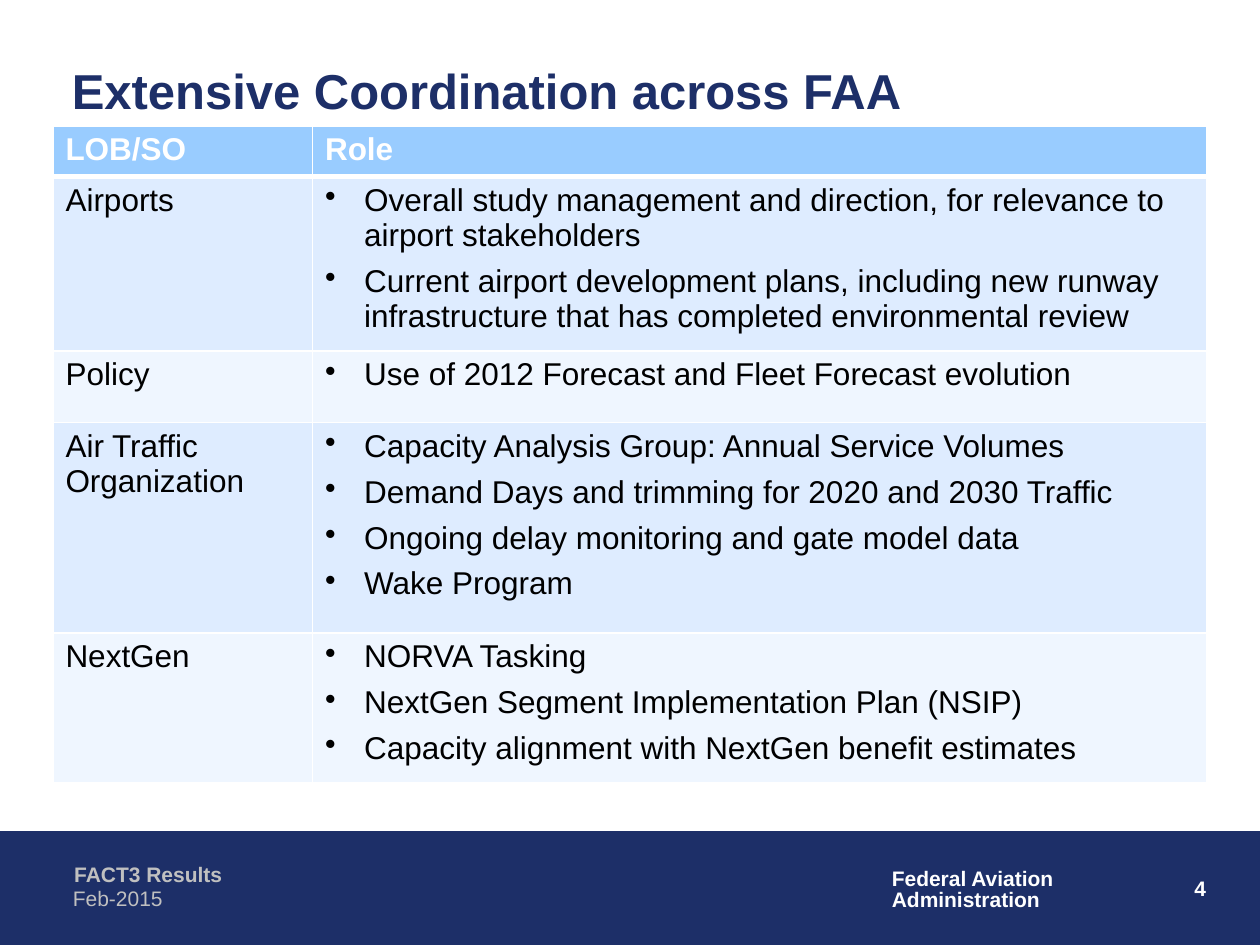
from lxml import etree
from pptx import Presentation
from pptx.dml.color import RGBColor
from pptx.enum.shapes import MSO_SHAPE
from pptx.enum.text import MSO_ANCHOR, PP_ALIGN
from pptx.oxml.ns import qn
from pptx.util import Inches, Pt

RECT = MSO_SHAPE.RECTANGLE
LEFT, RIGHT = PP_ALIGN.LEFT, PP_ALIGN.RIGHT
MIDDLE = MSO_ANCHOR.MIDDLE

NAVY = RGBColor(0x1D, 0x2F, 0x68)
SKY = RGBColor(0x99, 0xCC, 0xFF)
BANDS = RGBColor(0xDE, 0xEC, 0xFF), RGBColor(0xEF, 0xF6, 0xFF)
WHITE = RGBColor(0xFF, 0xFF, 0xFF)
GREY = RGBColor(0xC0, 0xC0, 0xC0)
BLACK = RGBColor(0, 0, 0)

COLS = 2.06, 7.1
HEAD = "LOB/SO", "Role"
HEAD_ROW = 0.38
ROLES = [
    ("Airports", 1.3, [
        "Overall study management and direction, for relevance to airport stakeholders",
        "Current airport development plans, including new runway "
        "infrastructure that has completed environmental review"]),
    ("Policy", 0.57, ["Use of 2012 Forecast and Fleet Forecast evolution"]),
    ("Air Traffic Organization", 1.67, [
        "Capacity Analysis Group: Annual Service Volumes",
        "Demand Days and trimming for 2020 and 2030 Traffic",
        "Ongoing delay monitoring and gate model data",
        "Wake Program"]),
    ("NextGen", 1.19, [
        "NORVA Tasking",
        "NextGen Segment Implementation Plan (NSIP)",
        "Capacity alignment with NextGen benefit estimates"]),
]


def place(shape, *box):
    """Set left, top, width and height in inches."""
    shape.left, shape.top, shape.width, shape.height = map(Inches, box)


def add_run(para, text, size, color, bold=False):
    """Add one formatted run to a paragraph."""
    run = para.add_run()
    run.text = text
    font = run.font
    font.name, font.size, font.bold = "Arial", Pt(size), bold
    font.color.rgb = color


def paras(frame, count):
    """Yield the first paragraph of a frame, then new ones."""
    yield frame.paragraphs[0]
    for _ in range(count - 1):
        yield frame.add_paragraph()


def add_label(slide, box, lines, color, bold=True, align=LEFT, gap=1.0, wrap=True):
    """Add a footer text box."""
    frame = slide.shapes.add_textbox(*map(Inches, box)).text_frame
    frame.word_wrap = wrap
    for para, line in zip(paras(frame, len(lines)), lines):
        para.alignment, para.line_spacing = align, gap
        add_run(para, line, 12, color, bold)


def add_bullet(para):
    """Give a paragraph a hanging bullet."""
    props = para._p.get_or_add_pPr()
    props.set("marL", str(Inches(0.31)))
    props.set("indent", str(-Inches(0.31)))
    etree.SubElement(props, qn("a:buChar")).set("char", "•")


def add_edges(cell, top, base):
    """Draw white cell borders with given top and bottom widths."""
    props = cell._tc.get_or_add_tcPr()
    edges = zip(("lnL", "lnR", "lnT", "lnB"), (1, 1, top, base))
    for spot, (tag, width) in enumerate(edges):
        line = etree.Element(qn("a:" + tag), w=str(Pt(width)))
        fill = etree.SubElement(line, qn("a:solidFill"))
        etree.SubElement(fill, qn("a:srgbClr")).set("val", str(WHITE))
        props.insert(spot, line)


def fill_cell(cell, lines, fill, color=BLACK, bold=False, after=6, dots=False, top=1, base=1):
    """Write and paint one table cell."""
    cell.fill.solid()
    cell.fill.fore_color.rgb = fill
    add_edges(cell, top, base)
    for para, line in zip(paras(cell.text_frame, len(lines)), lines):
        if dots:
            add_bullet(para)
        para.space_after = Pt(after)
        add_run(para, line, 18, color, bold)


def add_roles(slide):
    """Add the table of offices and their roles."""
    high = HEAD_ROW + sum(row[1] for row in ROLES)
    box = map(Inches, (0.42, 1, sum(COLS), high))
    table = slide.shapes.add_table(len(ROLES) + 1, len(COLS), *box).table
    for col, wide in zip(table.columns, COLS):
        col.width = Inches(wide)
    table.rows[0].height = Inches(HEAD_ROW)
    for col, text in enumerate(HEAD):
        fill_cell(table.cell(0, col), [text], SKY, WHITE, True, after=0, base=3)
    for row, (name, tall, roles) in enumerate(ROLES, 1):
        table.rows[row].height = Inches(tall)
        band, top = BANDS[(row - 1) % 2], 3 if row == 1 else 1
        fill_cell(table.cell(row, 0), [name], band, top=top)
        fill_cell(table.cell(row, 1), roles, band, dots=True, top=top)


def add_footer(slide):
    """Add the navy band and its labels."""
    band = slide.shapes.add_shape(RECT, *map(Inches, (0, 6.6, 10, 0.9)))
    band.shadow.inherit = False
    band.fill.solid()
    band.fill.fore_color.rgb = band.line.color.rgb = NAVY
    band.line.width = Pt(0.75)
    add_label(slide, (7.59, 6.9, 2.08, 0.5), ["4"], WHITE, align=RIGHT)
    add_label(slide, (6.98, 6.85, 1.5, 0.44), ["Federal Aviation", "Administration"],
              WHITE, gap=0.85, wrap=False)
    add_label(slide, (0.49, 6.79, 5.23, 0.3), ["FACT3 Results"], GREY)
    add_label(slide, (0.48, 6.98, 4.09, 0.3), ["Feb-2015"], GREY, bold=False)


def add_title(slide, text):
    """Place and write the slide title."""
    title = slide.shapes.title
    place(title, 0.47, 0.38, 9.27, 0.67)
    frame = title.text_frame
    frame.vertical_anchor = MIDDLE
    para = frame.paragraphs[0]
    para.alignment = LEFT
    add_run(para, text, 28, NAVY, True)


def main():
    """Build and save the slide."""
    deck = Presentation()
    deck.slide_width, deck.slide_height = Inches(10), Inches(7.5)
    slide = deck.slides.add_slide(deck.slide_layouts[5])
    add_footer(slide)
    add_title(slide, "Extensive Coordination across FAA")
    add_roles(slide)
    deck.save("out.pptx")


if __name__ == "__main__":
    main()
